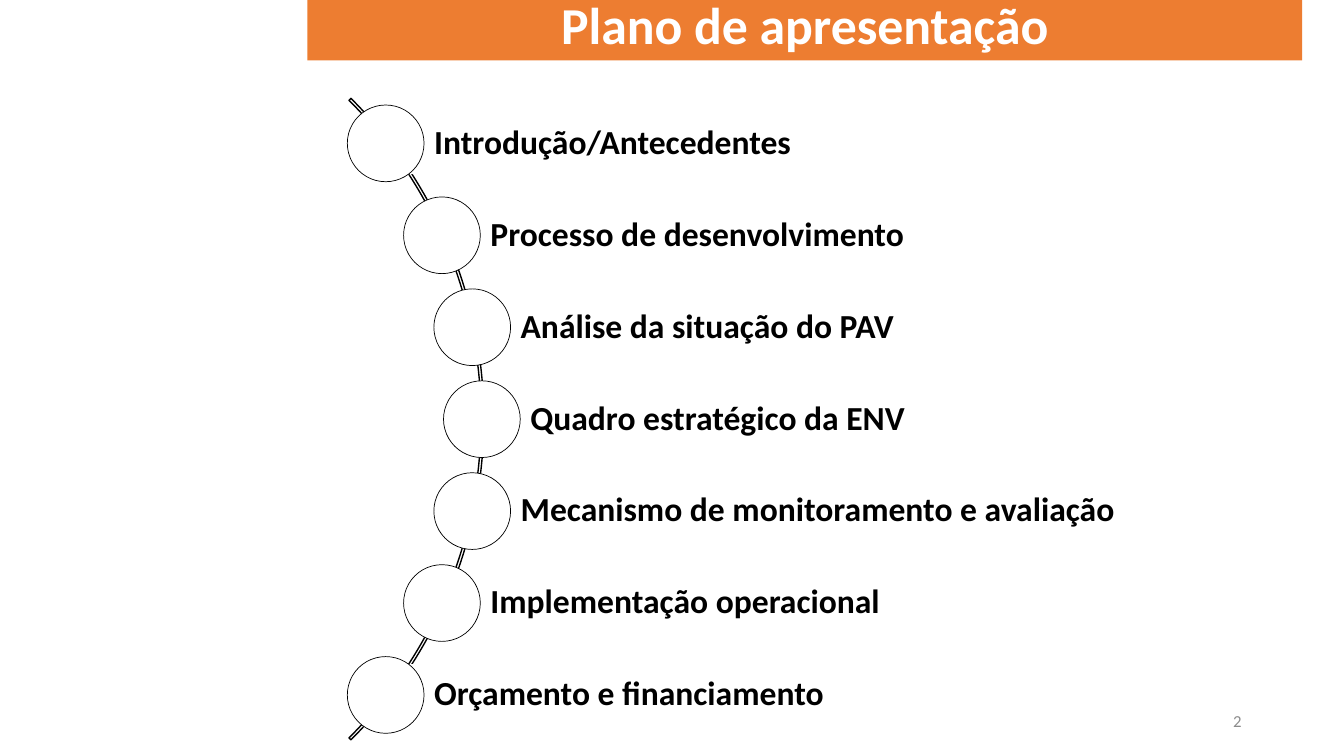
import math

from pptx import Presentation
from pptx.dml.color import RGBColor
from pptx.enum.shapes import MSO_SHAPE
from pptx.enum.text import MSO_ANCHOR, PP_ALIGN
from pptx.util import Pt

ARC, OVAL, RECT = MSO_SHAPE.BLOCK_ARC, MSO_SHAPE.OVAL, MSO_SHAPE.RECTANGLE
TOP, MIDDLE = MSO_ANCHOR.TOP, MSO_ANCHOR.MIDDLE
LEFT, CENTER, RIGHT = PP_ALIGN.LEFT, PP_ALIGN.CENTER, PP_ALIGN.RIGHT

ORANGE = RGBColor(0xED, 0x7D, 0x31)
WHITE = RGBColor(0xFF, 0xFF, 0xFF)
BLACK = RGBColor(0, 0, 0)
GREY = RGBColor(0x8C, 0x8C, 0x8C)

TOPICS = [
    "Introdução/Antecedentes",
    "Processo de desenvolvimento",
    "Análise da situação do PAV",
    "Quadro estratégico da ENV",
    "Mecanismo de monitoramento e avaliação",
    "Implementação operacional",
    "Orçamento e financiamento",
]


def write(holder, text, size, color, bold=False, align=LEFT, anchor=MIDDLE,
          spacing=1.0, before=0, insets=(7.2, 3.6, 7.2, 3.6)):
    """Fill a shape with one formatted paragraph."""
    frame = holder.text_frame
    frame.word_wrap = True
    frame.vertical_anchor = anchor
    (frame.margin_left, frame.margin_top,
     frame.margin_right, frame.margin_bottom) = map(Pt, insets)
    paragraph = frame.paragraphs[0]
    paragraph.alignment = align
    paragraph.line_spacing = spacing
    paragraph.space_before = Pt(before)
    run = paragraph.add_run()
    run.text = text
    run.font.name = "Calibri"
    run.font.size = Pt(size)
    run.font.bold = bold
    run.font.color.rgb = color


def add_outline(slide, preset, box, fill=None, line_width=None):
    """Add a flat preset shape with an optional fill and black line."""
    shape = slide.shapes.add_shape(preset, *map(Pt, box))
    shape.shadow.inherit = False
    if fill is None:
        shape.fill.background()
    else:
        shape.fill.solid()
        shape.fill.fore_color.rgb = fill
    if line_width is None:
        shape.line.fill.background()
    else:
        shape.line.color.rgb = BLACK
        shape.line.width = Pt(line_width)
    return shape


def build_heading(slide, box):
    """Place the title placeholder as an orange band."""
    heading = slide.shapes.title
    heading.left, heading.top, heading.width, heading.height = map(Pt, box)
    heading.fill.solid()
    heading.fill.fore_color.rgb = ORANGE
    write(heading, "Plano de apresentação", 37, WHITE, bold=True, align=CENTER,
          anchor=TOP, spacing=0.8, before=10)


def build_agenda(slide, box, topics):
    """Hang the topics as beads on a curved rail at the left of the box."""
    left, top, width, height = box
    rail_radius, bead_radius, label_height = 324, 27.4, 44
    rail_right, middle = left + 97.5, top + height / 2
    rail = add_outline(slide, ARC,
                       (rail_right - 2 * rail_radius, middle - rail_radius,
                        2 * rail_radius, 2 * rail_radius), line_width=1)
    rail.adjustments[0] = 189
    rail.adjustments[1] = 27
    rail.adjustments[2] = 0.003

    orbit = rail_radius - 7.2
    orbit_x = rail_right - 1.4 - orbit
    step = (height - 2 * bead_radius) / (len(topics) - 1)
    for index, topic in enumerate(topics):
        offset = (index - (len(topics) - 1) / 2) * step
        x = orbit_x + math.sqrt(orbit ** 2 - offset ** 2)
        y = middle + offset
        label = add_outline(slide, RECT,
                            (x, y - label_height / 2, left + width - x, label_height),
                            fill=WHITE)
        write(label, topic, 24, BLACK, bold=True, spacing=0.9,
              insets=(34.6, 5, 5, 5))
        add_outline(slide, OVAL,
                    (x - bead_radius, y - bead_radius, 2 * bead_radius, 2 * bead_radius),
                    fill=WHITE, line_width=0.5)


def build_page_number(slide, box, number):
    """Place the grey page number at the lower right."""
    page = slide.shapes.add_textbox(*map(Pt, box))
    write(page, number, 12, GREY, align=RIGHT)


def main():
    """Build and save the agenda slide."""
    deck = Presentation()
    deck.slide_width, deck.slide_height = Pt(960), Pt(540)
    slide = deck.slides.add_slide(deck.slide_layouts[5])
    build_page_number(slide, (678, 500.4, 216, 28.8), "2")
    build_heading(slide, (219.6, 0, 710.6, 43.2))
    build_agenda(slide, (248.1, 75, 627.4, 448.8), TOPICS)
    deck.save("out.pptx")


if __name__ == "__main__":
    main()
